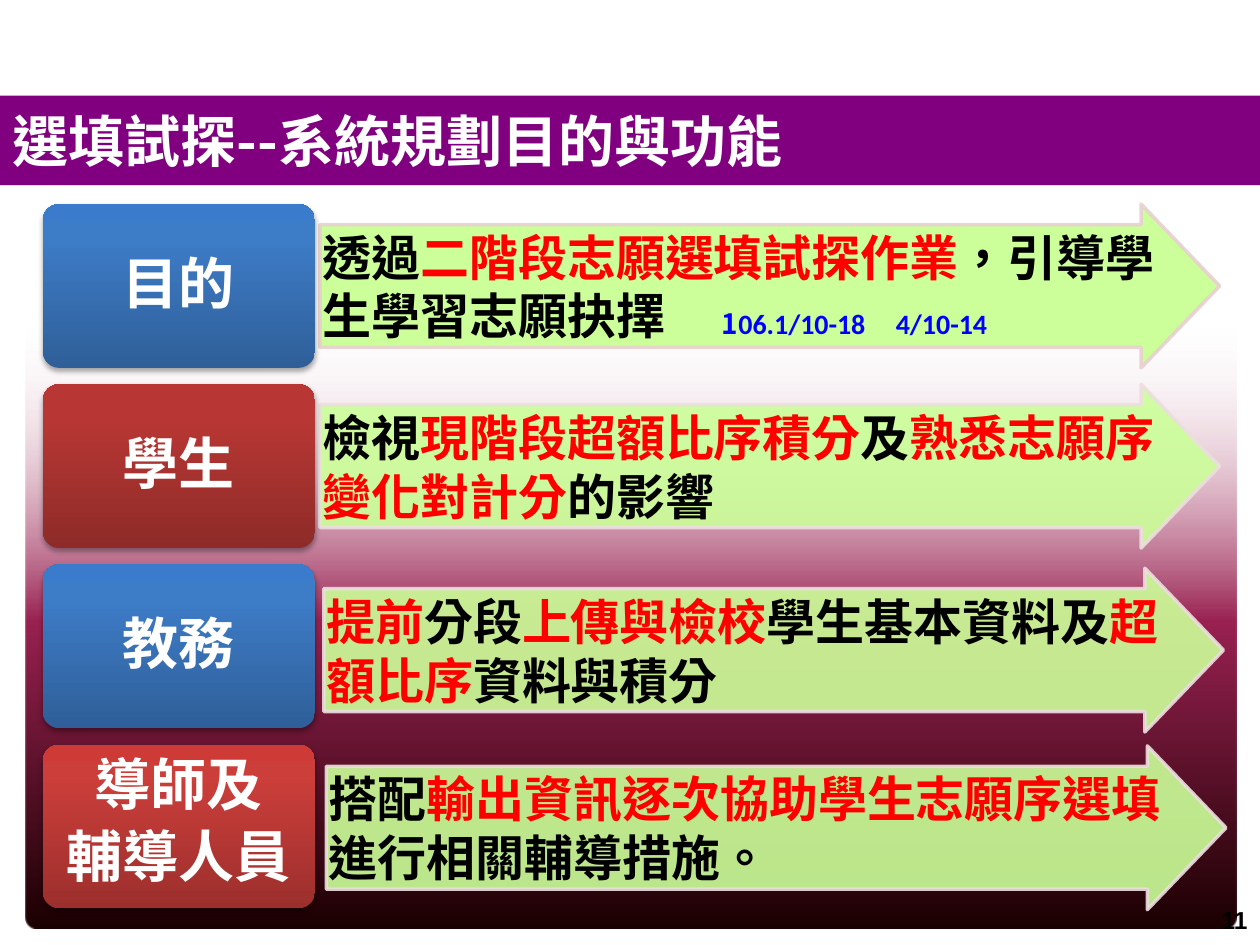
"""Build the slide on the purpose and functions of the trial selection system."""
from dataclasses import dataclass

from lxml import etree
from pptx import Presentation
from pptx.dml.color import RGBColor
from pptx.enum.shapes import MSO_SHAPE
from pptx.enum.text import MSO_ANCHOR, PP_ALIGN
from pptx.oxml.ns import qn
from pptx.util import Inches, Pt

RECT, ROUND, ARROW = MSO_SHAPE.RECTANGLE, MSO_SHAPE.ROUNDED_RECTANGLE, MSO_SHAPE.RIGHT_ARROW
LEFT, CENTER, RIGHT = PP_ALIGN.LEFT, PP_ALIGN.CENTER, PP_ALIGN.RIGHT
MIDDLE = MSO_ANCHOR.MIDDLE
CJK = "Noto Sans CJK SC"
COLORS = {
    "white": "FFFFFF", "black": "000000", "red": "FF0000", "date": "0000FF",
    "purple": "800080", "arrow": "CCFF99", "edge": "E8D0D0", "soft_edge": "ECDEDE",
}
GRADIENTS = {
    "backdrop": ((0, "1A0001", 100), (50, "992151", 100), (100, "FFFFFF", 0)),
    "blue": ((0, "2F5F99", 100), (80, "3D7CC7", 100), (100, "3A7CCB", 100)),
    "dark_red": ((0, "8E2B28", 100), (80, "B83734", 100), (100, "BB3531", 100)),
    "red": ((0, "9C2F2D", 100), (80, "CB3E3A", 100), (100, "CE3B37", 100)),
}
TOP, PITCH, ROW_H = 1.62, 1.43, 1.3


@dataclass
class Run:
    """A stretch of text in one format."""
    text: str
    color: str = "black"
    size: float = 28
    font: str = CJK


@dataclass
class Row:
    """A label with the arrow that explains it."""
    label: tuple
    gradient: str
    x: float
    y: float
    runs: list
    edge: str = "soft_edge"
    opacity: int = 90
    spacing: object = 0.9


ROWS = [
    Row(("目的",), "blue", 2.54, 1.62, [
        Run("透過"), Run("二階段志願選填試探作業", "red"), Run("，引導學生學習志願抉擇"),
        Run("\t1", "date", 16), Run("06.1/10-18\t4/10-14", "date", 16, "Calibri")],
        "edge", 100),
    Row(("學生",), "dark_red", 2.54, 3.05, [
        Run("檢視"), Run("現階段超額比序積分", "red"), Run("及"),
        Run("熟悉志願序變化對計分", "red"), Run("的影響")]),
    Row(("教務",), "blue", 2.57, 4.51, [
        Run("提前", "red"), Run("分段"), Run("上傳與檢校", "red"),
        Run("學生基本資料及"), Run("超額比序", "red"), Run("資料與積分")]),
    Row(("導師及", "輔導人員"), "red", 2.59, 5.92, [
        Run("搭配"), Run("輸出資訊逐次協助學生志願序選填", "red"),
        Run("進行相關輔導措施。")], spacing=Pt(30)),
]


def rgb(name: str) -> RGBColor:
    """Return a named colour."""
    return RGBColor.from_string(COLORS[name])


def add_alpha(parent, percent: int) -> None:
    """Set the opacity of the colour inside an element."""
    color = next(parent.iter(qn("a:srgbClr")))
    etree.SubElement(color, qn("a:alpha"), val=str(percent * 1000))


def add_block(s, kind, x: float, y: float, w: float, h: float, color=None):
    """Add a plain shape without line or shadow."""
    sp = s.shapes.add_shape(kind, Inches(x), Inches(y), Inches(w), Inches(h))
    sp.shadow.inherit = False
    sp.line.fill.background()
    if color:
        sp.fill.solid()
        sp.fill.fore_color.rgb = rgb(color)
    return sp


def fill_gradient(sp, name: str) -> None:
    """Fill a shape with a gradient running from bottom to top."""
    sp.fill.gradient()
    sp.fill.gradient_angle = 90
    stops = next(sp.element.spPr.iter(qn("a:gsLst")))
    for old in list(stops):
        stops.remove(old)
    for position, color, opacity in GRADIENTS[name]:
        gs = etree.SubElement(stops, qn("a:gs"), pos=str(position * 1000))
        etree.SubElement(gs, qn("a:srgbClr"), val=color)
        if opacity < 100:
            add_alpha(gs, opacity)


def add_shadow(sp) -> None:
    """Give a shape a soft shadow below it."""
    effects = sp.element.spPr.find(qn("a:effectLst"))
    shadow = etree.SubElement(effects, qn("a:outerShdw"), blurRad=str(Pt(3.1)),
                              dist=str(Pt(1.8)), dir="5400000", rotWithShape="0")
    etree.SubElement(shadow, qn("a:srgbClr"), val=COLORS["black"])
    add_alpha(shadow, 35)


def write(sp, paragraphs, *, align=LEFT, margins=(0.1, 0.05, 0.1, 0.05),
          spacing=None, gap: float = 0, tabs=()) -> None:
    """Write paragraphs of bold runs into a shape."""
    tf = sp.text_frame
    tf.word_wrap = True
    tf.vertical_anchor = MIDDLE
    tf.margin_left, tf.margin_top, tf.margin_right, tf.margin_bottom = map(Inches, margins)
    for i, runs in enumerate(paragraphs):
        p = tf.add_paragraph() if i else tf.paragraphs[0]
        p.alignment = align
        if spacing:
            p.line_spacing = spacing
        if i:
            p.space_before = Pt(gap)
        if tabs:
            tab_list = etree.SubElement(p._p.get_or_add_pPr(), qn("a:tabLst"))
            for stop in tabs:
                etree.SubElement(tab_list, qn("a:tab"), pos=str(Inches(stop)), algn="l")
        for run in runs:
            r = p.add_run()
            r.text = run.text
            r.font.size = Pt(run.size)
            r.font.bold = True
            r.font.name = run.font
            r.font.color.rgb = rgb(run.color)
            r._r.rPr.set("lang", "zh-TW")
            latin = r._r.rPr.find(qn("a:latin"))
            latin.addnext(etree.Element(qn("a:ea"), typeface=run.font))


def add_arrow(s, row: Row) -> None:
    """Draw the arrow of a row with its explanation."""
    sp = add_block(s, ARROW, row.x, row.y, 7.14, ROW_H, "arrow")
    sp.adjustments[0], sp.adjustments[1] = 0.75, 0.48
    sp.line.color.rgb = rgb(row.edge)
    sp.line.width = Pt(2)
    add_alpha(sp.element.spPr.find(qn("a:ln")), 90)
    if row.opacity < 100:
        add_alpha(sp.element.spPr.find(qn("a:solidFill")), row.opacity)
    write(sp, [row.runs], margins=(0.02, 0, 0, 0), tabs=(3.17, 4.55))


def add_label(s, row: Row, y: float) -> None:
    """Draw the label of a row."""
    sp = add_block(s, ROUND, 0.34, y, 2.16, ROW_H)
    sp.adjustments[0] = 0.1
    fill_gradient(sp, row.gradient)
    add_shadow(sp)
    write(sp, [[Run(line, "white", 32)] for line in row.label], align=CENTER,
          margins=(0.05, 0.05, 0.05, 0.05), spacing=row.spacing, gap=11)


def main() -> None:
    """Build and save the slide."""
    prs = Presentation()
    prs.slide_width, prs.slide_height = Inches(10), Inches(7.5)
    s = prs.slides.add_slide(prs.slide_layouts[6])
    backdrop = add_block(s, ROUND, 0.2, 2.5, 9.61, 4.87)
    backdrop.adjustments[0] = 0.02
    fill_gradient(backdrop, "backdrop")
    for i, row in enumerate(ROWS):
        add_arrow(s, row)
        add_label(s, row, TOP + i * PITCH)
    title = add_block(s, RECT, 0, 0.76, 10, 0.71, "purple")
    write(title, [[Run("選填試探--系統規劃目的與功能", "white", 32)]])
    number = s.shapes.add_textbox(Inches(7.67), Inches(7.1), Inches(2.33), Inches(0.4))
    write(number, [[Run("11", size=14, font="Arial")]], align=RIGHT)
    prs.save("out.pptx")


if __name__ == "__main__":
    main()
